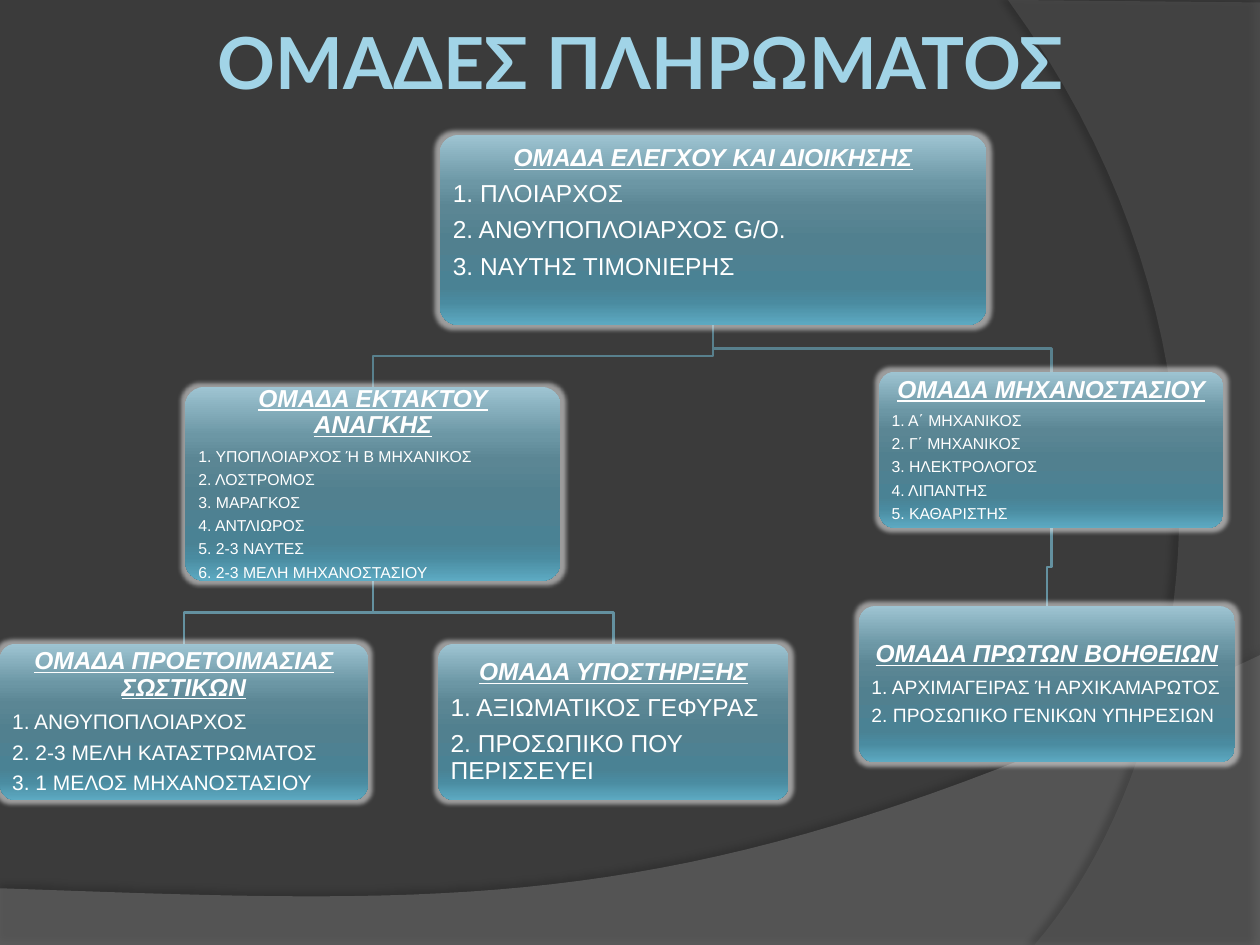
"""Build the crew groups organisation chart slide."""
from dataclasses import dataclass

from pptx import Presentation
from pptx import util as u
from pptx.dml.color import RGBColor
from pptx.enum import shapes, text
from pptx.oxml import parse_xml
from pptx.oxml.ns import nsdecls, qn

BACKGROUND = RGBColor(0x3B, 0x3B, 0x3B)
LOWER_WAVE = RGBColor(0x7F, 0x7F, 0x7F)
RIGHT_WAVE = RGBColor(0x5E, 0x5E, 0x5E)
TITLE_BLUE = RGBColor(0xA1, 0xD4, 0xE7)
WHITE = RGBColor(0xFF, 0xFF, 0xFF)
UPPER_LINE = RGBColor(0x58, 0x80, 0x8D)
LOWER_LINE = RGBColor(0x64, 0x91, 0xA0)
CARD_STOPS = (
    (0, RGBColor(0x9E, 0xC4, 0xD2)),
    (25, RGBColor(0x6C, 0x97, 0xA5)),
    (38, RGBColor(0x5B, 0x86, 0x94)),
    (55, RGBColor(0x51, 0x80, 0x8F)),
    (80, RGBColor(0x4A, 0x82, 0x94)),
    (88, RGBColor(0x4A, 0x8B, 0xA0)),
    (100, RGBColor(0x5D, 0xAA, 0xC2)),
)
CURVE_STEPS = 40
Point = tuple[float, float]


@dataclass(frozen=True)
class Group:
    left: float
    top: float
    width: float
    height: float
    title: str
    members: tuple[str, ...]
    size: int = 14
    bottom_inset: float = 0.06


@dataclass(frozen=True)
class Wave:
    curve: tuple[Point, Point, Point, Point]
    corners: tuple[Point, ...]
    color: RGBColor
    opacity: int
    shadow_opacity: int
    shadow_distance: float
    shadow_angle: int


@dataclass(frozen=True)
class Link:
    parent: str
    child: str
    color: RGBColor


WAVES = (
    Wave(((10, 5.2), (5.59, 7.29), (3.91, 7.19), (0, 7.05)),
         ((0, 7.5), (10, 7.5)), LOWER_WAVE, 45, 35, 3.5, 270),
    Wave(((8.21, 7.5), (9.35, 6.19), (10.18, 3), (8, 0)),
         ((10, 0.02), (10, 7.5)), RIGHT_WAVE, 40, 45, 4, 180),
)
GROUPS = {
    "command": Group(3.49, 1.07, 4.34, 1.51, "ΟΜΑΔΑ ΕΛΕΓΧΟΥ ΚΑΙ ΔΙΟΙΚΗΣΗΣ", (
        "ΠΛΟΙΑΡΧΟΣ", "ΑΝΘΥΠΟΠΛΟΙΑΡΧΟΣ G/O.", "NAYTHΣ ΤΙΜΟΝΙΕΡΗΣ"),
        bottom_inset=0.33),
    "emergency": Group(1.47, 3.07, 2.98, 1.54, "ΟΜΑΔΑ ΕΚΤΑΚΤΟΥ ΑΝΑΓΚΗΣ", (
        "ΥΠΟΠΛΟΙΑΡΧΟΣ Ή Β ΜΗΧΑΝΙΚΟΣ", "ΛΟΣΤΡΟΜΟΣ", "ΜΑΡΑΓΚΟΣ", "ΑΝΤΛΙΩΡΟΣ",
        "2-3 ΝΑΥΤΕΣ", "2-3 ΜΕΛΗ ΜΗΧΑΝΟΣΤΑΣΙΟΥ"), size=9),
    "lifeboats": Group(0, 5.11, 2.92, 1.24, "ΟΜΑΔΑ ΠΡΟΕΤΟΙΜΑΣΙΑΣ ΣΩΣΤΙΚΩΝ", (
        "ΑΝΘΥΠΟΠΛΟΙΑΡΧΟΣ", "2-3 ΜΕΛΗ ΚΑΤΑΣΤΡΩΜΑΤΟΣ", "1 ΜΕΛΟΣ ΜΗΧΑΝΟΣΤΑΣΙΟΥ"),
        size=12),
    "support": Group(3.48, 5.11, 2.78, 1.24, "ΟΜΑΔΑ ΥΠΟΣΤΗΡΙΞΗΣ", (
        "ΑΞΙΩΜΑΤΙΚΟΣ ΓΕΦΥΡΑΣ", "ΠΡΟΣΩΠΙΚΟ ΠΟΥ ΠΕΡΙΣΣΕΥΕΙ")),
    "engine": Group(6.98, 2.95, 2.73, 1.24, "ΟΜΑΔΑ ΜΗΧΑΝΟΣΤΑΣΙΟΥ", (
        "Α΄ ΜΗΧΑΝΙΚΟΣ", "Γ΄ ΜΗΧΑΝΙΚΟΣ", "ΗΛΕΚΤΡΟΛΟΓΟΣ", "ΛΙΠΑΝΤΗΣ",
        "ΚΑΘΑΡΙΣΤΗΣ"), size=9),
    "first_aid": Group(6.82, 4.81, 2.98, 1.24, "ΟΜΑΔΑ ΠΡΩΤΩΝ ΒΟΗΘΕΙΩΝ", (
        "ΑΡΧΙΜΑΓΕΙΡΑΣ Ή ΑΡΧΙΚΑΜΑΡΩΤΟΣ", "ΠΡΟΣΩΠΙΚΟ ΓΕΝΙΚΩΝ ΥΠΗΡΕΣΙΩΝ"),
        size=11),
}
LINKS = (
    Link("command", "emergency", UPPER_LINE),
    Link("command", "engine", UPPER_LINE),
    Link("emergency", "lifeboats", LOWER_LINE),
    Link("emergency", "support", LOWER_LINE),
    Link("engine", "first_aid", LOWER_LINE),
)


def write(paragraph, content: str, *, size: float, font: str = "Arial",
          color: RGBColor = WHITE, bold: bool = False, italic: bool = False,
          underline: bool = False, centered: bool = False,
          line_spacing: float = 0.9, space_after: float = 0) -> None:
    run = paragraph.add_run()
    run.text = content
    run.font.name, run.font.size = font, u.Pt(size)
    run.font.color.rgb = color
    run.font.bold, run.font.italic, run.font.underline = bold, italic, underline
    paragraph.alignment = text.PP_ALIGN.CENTER if centered else text.PP_ALIGN.LEFT
    paragraph.line_spacing = line_spacing
    paragraph.space_after = u.Pt(space_after)


def set_frame(frame, inset: float, bottom: float) -> None:
    frame.word_wrap = True
    frame.vertical_anchor = text.MSO_ANCHOR.MIDDLE
    frame.margin_left = frame.margin_right = frame.margin_top = u.Inches(inset)
    frame.margin_bottom = u.Inches(bottom)


def add_effect(shape, name: str, attributes: str, color: RGBColor, opacity: int) -> None:
    shape.shadow.inherit = False
    shape.element.spPr.find(qn("a:effectLst")).append(parse_xml(
        f'<a:{name} {nsdecls("a")} {attributes}><a:srgbClr val="{color}">'
        f'<a:alpha val="{opacity * 1000}"/></a:srgbClr></a:{name}>'))


def add_outline(slide, points: list[Point], close: bool):
    corners = [(u.Inches(x), u.Inches(y)) for x, y in points]
    builder = slide.shapes.build_freeform(*corners[0])
    builder.add_line_segments(corners[1:], close=close)
    shape = builder.convert_to_shape()
    shape.shadow.inherit = False
    return shape


def bezier(curve: tuple[Point, Point, Point, Point], t: float) -> Point:
    weights = ((1 - t) ** 3, 3 * t * (1 - t) ** 2, 3 * t * t * (1 - t), t ** 3)
    return (sum(w * x for w, (x, _) in zip(weights, curve)),
            sum(w * y for w, (_, y) in zip(weights, curve)))


def add_wave(slide, wave: Wave) -> None:
    points = [bezier(wave.curve, step / CURVE_STEPS) for step in range(CURVE_STEPS + 1)]
    shape = add_outline(slide, points + list(wave.corners), close=True)
    shape.fill.solid()
    shape.fill.fore_color.rgb = wave.color
    shape.element.spPr.find(qn("a:solidFill"))[0].append(parse_xml(
        f'<a:alpha {nsdecls("a")} val="{wave.opacity * 1000}"/>'))
    shape.line.fill.background()
    add_effect(shape, "outerShdw",
               f'blurRad="{u.Pt(4)}" dist="{u.Pt(wave.shadow_distance)}" '
               f'dir="{wave.shadow_angle * 60000}"',
               RGBColor(0, 0, 0), wave.shadow_opacity)


def add_link(slide, link: Link) -> None:
    parent, child = GROUPS[link.parent], GROUPS[link.child]
    start_x, start_y = parent.left + parent.width / 2, parent.top + parent.height
    end_x, end_y = child.left + child.width / 2, child.top
    middle = (start_y + end_y) / 2
    shape = add_outline(slide, [(start_x, start_y), (start_x, middle),
                                (end_x, middle), (end_x, end_y)], close=False)
    shape.fill.background()
    shape.line.color.rgb = link.color
    shape.line.width = u.Pt(1.5)


def add_group(slide, group: Group) -> None:
    shape = slide.shapes.add_shape(
        shapes.MSO_SHAPE.ROUNDED_RECTANGLE, u.Inches(group.left),
        u.Inches(group.top), u.Inches(group.width), u.Inches(group.height))
    shape.adjustments[0] = 0.1
    shape.fill.gradient()
    shape.fill.gradient_angle = 270
    stops = shape.element.spPr.find(qn("a:gradFill")).find(qn("a:gsLst"))
    stops[:] = [parse_xml(f'<a:gs {nsdecls("a")} pos="{position * 1000}">'
                          f'<a:srgbClr val="{color}"/></a:gs>')
                for position, color in CARD_STOPS]
    shape.line.fill.background()
    add_effect(shape, "glow", f'rad="{u.Pt(5)}"', WHITE, 50)
    frame = shape.text_frame
    set_frame(frame, 0.06, group.bottom_inset)
    write(frame.paragraphs[0], group.title, size=14, bold=True, italic=True,
          underline=True, centered=True, space_after=5.5)
    for number, member in enumerate(group.members, start=1):
        write(frame.add_paragraph(), f"{number}. {member}", size=group.size,
              space_after=round(group.size * 0.39, 1))


def main() -> None:
    presentation = Presentation()
    presentation.slide_width, presentation.slide_height = u.Inches(10), u.Inches(7.5)
    slide = presentation.slides.add_slide(presentation.slide_layouts[6])
    slide.background.fill.solid()
    slide.background.fill.fore_color.rgb = BACKGROUND
    for wave in WAVES:
        add_wave(slide, wave)
    title = slide.shapes.add_textbox(u.Inches(0.59), u.Inches(0.13), u.Inches(9), u.Inches(0.7))
    set_frame(title.text_frame, 0.05, 0.05)
    write(title.text_frame.paragraphs[0], "ΟΜΑΔΕΣ ΠΛΗΡΩΜΑΤΟΣ", size=41, font="Lato",
          color=TITLE_BLUE, bold=True, centered=True, line_spacing=1.0)
    for link in LINKS:
        add_link(slide, link)
    for group in GROUPS.values():
        add_group(slide, group)
    presentation.save("out.pptx")


if __name__ == "__main__":
    main()
